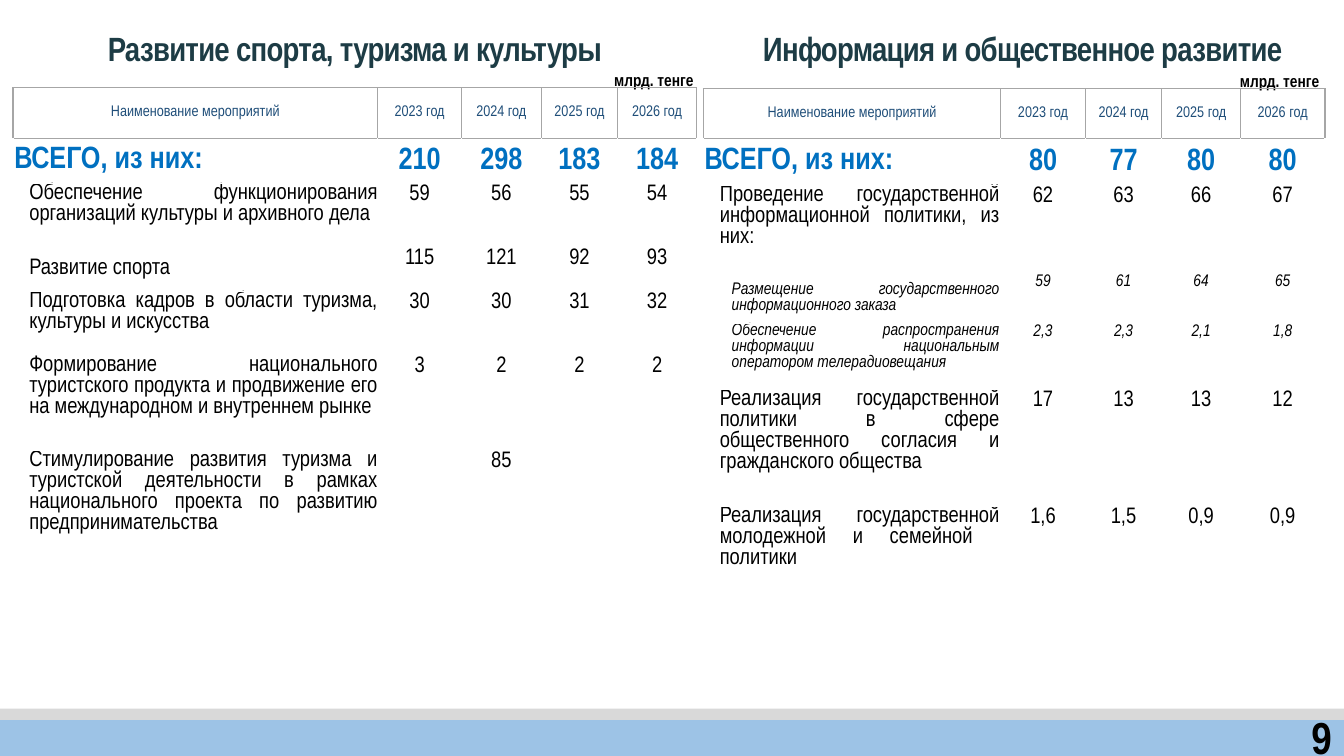
from dataclasses import dataclass
from lxml.etree import SubElement
from pptx import Presentation
from pptx.dml.color import RGBColor as RGB
from pptx.enum.shapes import MSO_SHAPE as Shape
from pptx.enum.text import MSO_ANCHOR as Anchor, PP_ALIGN as Align
from pptx.oxml import parse_xml
from pptx.oxml.ns import nsdecls, qn
from pptx.util import Cm, Pt


@dataclass(frozen=True)
class Theme:
    font: str = "Arial Narrow"
    black: str = "000000"
    title: str = "1D3C45"
    head: str = "1F4E79"
    total: str = "0070C0"
    grid: str = "A6A6A6"
    blue: str = "9DC3E6"
    gray: str = "D9D9D9"
    page_pt: int = 32
    title_pt: int = 24
    total_pt: int = 22
    body_pt: int = 16
    note_pt: int = 12
    head_pt: int = 11


T = Theme()


def write(frame, text, size=T.body_pt, color=T.black, bold=False, italic=False,
          align=Align.CENTER, lead=None, track=None):
    par = frame.paragraphs[0]
    par.alignment = align
    if lead:
        par.line_spacing = lead
    run = par.add_run()
    run.text = text
    font = run.font
    font.name, font.size = T.font, Pt(size)
    font.bold, font.italic = bold, italic
    font.color.rgb = RGB.from_string(color)
    if track:
        font._element.set("spc", str(track))


def edge(cell, sides):
    """Draw thin grid lines on the given sides, in the order L, R, T, B."""
    props = cell._tc.get_or_add_tcPr()
    for i, side in enumerate(sides):
        line = parse_xml(f'<a:ln{side} {nsdecls("a")} w="12700"/>')
        fill = SubElement(line, qn("a:solidFill"))
        SubElement(fill, qn("a:srgbClr"), val=T.grid)
        props.insert(i, line)


deck = Presentation()
deck.slide_width, deck.slide_height = Cm(33.87), Cm(19.05)
slide = deck.slides.add_slide(deck.slide_layouts[6])
shapes = slide.shapes

# Footer bands
for top, high, color in [(18.08, 0.97, T.blue), (17.86, 0.28, T.gray)]:
    band = shapes.add_shape(Shape.RECTANGLE, 0, Cm(top), deck.slide_width, Cm(high))
    band.shadow.inherit = False
    band.fill.solid()
    band.fill.fore_color.rgb = RGB.from_string(color)
    band.line.fill.background()

# Titles, units and page number
title = dict(size=T.title_pt, color=T.title, bold=True, lead=1.1, track=-50)
unit = dict(size=T.note_pt, bold=True, align=Align.RIGHT, lead=1.1)
page = dict(size=T.page_pt, bold=True, align=Align.RIGHT)
labels = [
    ("9", (30.18, 18.06, 3.63, 1.02), page),
    ("Развитие спорта, туризма и культуры", (0.33, 0.48, 17.22, 1.37), title),
    ("млрд. тенге", (14.68, 1.37, 3.05, 1.22), unit),
    ("Информация и общественное развитие", (17.93, 0.48, 15.67, 1.37), title),
    ("млрд. тенге", (30.45, 1.4, 3.05, 1.22), unit),
]
for text, place, style in labels:
    frame = shapes.add_textbox(*map(Cm, place)).text_frame
    frame.word_wrap = True
    frame.vertical_anchor = Anchor.MIDDLE
    write(frame, text, **style)

# Budget tables: each row is kind, height, name and yearly values
years = ["2023 год", "2024 год", "2025 год", "2026 год"]
head, total = "Наименование мероприятий", "ВСЕГО, из них:"
sport = [
    ("head", 1.27, head, *years),
    ("total", 1.14, total, "210", "298", "183", "184"),
    ("item", 1.6, "Обеспечение функционирования организаций культуры и архивного дела",
     "59", "56", "55", "54"),
    ("mid", 1.12, "Развитие спорта", "115", "121", "92", "93"),
    ("item", 1.6, "Подготовка кадров в области туризма, культуры и искусства",
     "30", "30", "31", "32"),
    ("item", 2.41, "Формирование национального туристского продукта и продвижение его "
     "на международном и внутреннем рынке", "3", "2", "2", "2"),
    ("item", 3.2, "Стимулирование развития туризма и туристской деятельности в рамках "
     "национального проекта по развитию предпринимательства", "", "85", "", ""),
]
info = [
    ("head", 1.24, head, *years),
    ("total", 1.19, total, "80", "77", "80", "80"),
    ("item", 2.21, "Проведение государственной информационной политики, из них:",
     "62", "63", "66", "67"),
    ("submid", 1.27, "Размещение государственного информационного заказа",
     "59", "61", "64", "65"),
    ("sub", 1.65, "Обеспечение распространения информации национальным оператором "
     "телерадиовещания", "2,3", "2,3", "2,1", "1,8"),
    ("item", 2.95, "Реализация государственной политики в сфере общественного согласия "
     "и гражданского общества", "17", "13", "13", "12"),
    ("item", 2.21, "Реализация государственной молодежной и семейной  политики",
     "1,6", "1,5", "0,9", "0,9"),
]
sub = dict(size=T.note_pt, italic=True)
styles = {
    "head": dict(size=T.head_pt, color=T.head),
    "total": dict(size=T.total_pt, color=T.total, bold=True),
    "item": {}, "mid": {}, "sub": sub, "submid": sub,
}
aligns = {"head": Align.CENTER, "total": Align.LEFT}
indents = {"total": 0.03, "sub": 0.71, "submid": 0.71}
sides = {"head": "LRTB", "total": "T"}
tables = [
    (0.33, 2.21, [9.19, 2.11, 2.01, 1.93, 1.98], sport),
    (17.73, 2.24, [7.49, 2.13, 1.93, 1.98, 2.13], info),
]
for left, top, widths, rows in tables:
    high = sum(row[1] for row in rows)
    table = shapes.add_table(len(rows), len(widths), Cm(left), Cm(top),
                             Cm(sum(widths)), Cm(high)).table
    table.first_row = table.horz_banding = False
    for col, width in zip(table.columns, widths):
        col.width = Cm(width)
    for r, (kind, tall, *texts) in enumerate(rows):
        table.rows[r].height = Cm(tall)
        for c, text in enumerate(texts):
            cell = table.cell(r, c)
            cell.fill.background()
            edge(cell, sides.get(kind, ""))
            named = c == 0
            middle = kind in ("head", "total") or named and kind in ("mid", "submid")
            cell.vertical_anchor = Anchor.MIDDLE if middle else Anchor.TOP
            if kind != "head":
                cell.margin_left = Cm(indents.get(kind, 0.41) if named else 0.03)
                cell.margin_right = Cm(0 if named and rows is sport else 0.03)
                cell.margin_top = Cm(0 if named else 0.03)
                cell.margin_bottom = 0
            align = aligns.get(kind, Align.JUSTIFY) if named else Align.CENTER
            if text:
                write(cell.text_frame, text, align=align, **styles[kind])

deck.save("out.pptx")
